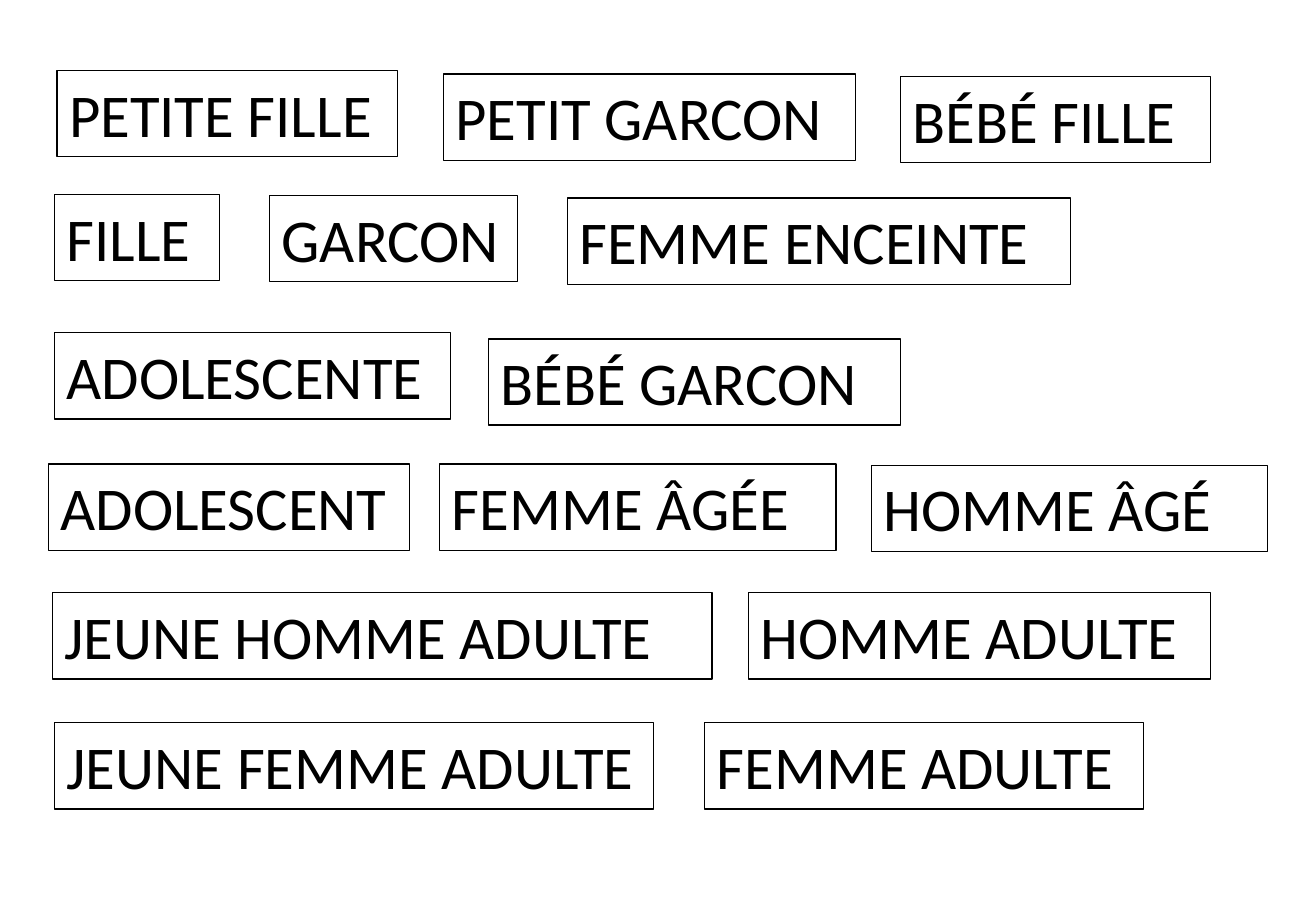
import pptx
import pptx.dml.color
import pptx.enum.text
import pptx.util

Inches = pptx.util.Inches
BLACK = pptx.dml.color.RGBColor(0, 0, 0)
LABEL_HEIGHT = 0.71
FRAME_FORMAT = {
    "word_wrap": True,
    "auto_size": pptx.enum.text.MSO_AUTO_SIZE.SHAPE_TO_FIT_TEXT,
}
FONT_FORMAT = {"name": "Calibri", "size": pptx.util.Pt(36)}

LABELS = [
    ("PETITE FILLE", 0.47, 0.58, 2.8),
    ("PETIT GARCON", 3.65, 0.61, 3.39),
    ("BÉBÉ FILLE", 7.41, 0.63, 2.55),
    ("FILLE", 0.45, 1.6, 1.36),
    ("GARCON", 2.22, 1.61, 2.04),
    ("FEMME ENCEINTE", 4.67, 1.63, 4.14),
    ("ADOLESCENTE", 0.45, 2.74, 3.26),
    ("BÉBÉ GARCON", 4.02, 2.79, 3.39),
    ("ADOLESCENT", 0.4, 3.82, 2.97),
    ("FEMME ÂGÉE", 3.62, 3.82, 3.26),
    ("HOMME ÂGÉ", 7.17, 3.83, 3.26),
    ("JEUNE HOMME ADULTE", 0.43, 4.88, 5.43),
    ("HOMME ADULTE", 6.16, 4.88, 3.8),
    ("JEUNE FEMME ADULTE", 0.45, 5.95, 4.93),
    ("FEMME ADULTE", 5.8, 5.95, 3.61),
]


def apply_format(target, values):
    for name, value in values.items():
        setattr(target, name, value)


def add_label(s, text, left, top, width):
    sp = s.shapes.add_textbox(
        Inches(left), Inches(top), Inches(width), Inches(LABEL_HEIGHT)
    )
    sp.line.color.rgb = BLACK
    sp.line.width = pptx.util.Pt(0.75)
    tf = sp.text_frame
    apply_format(tf, FRAME_FORMAT)
    r = tf.paragraphs[0].add_run()
    r.text = text
    apply_format(r.font, FONT_FORMAT)
    r.font.color.rgb = BLACK


def main():
    prs = pptx.Presentation()
    prs.slide_width = Inches(10.83)
    prs.slide_height = Inches(7.5)
    s = prs.slides.add_slide(prs.slide_layouts[6])
    for label in LABELS:
        add_label(s, *label)
    prs.save("out.pptx")


if __name__ == "__main__":
    main()
